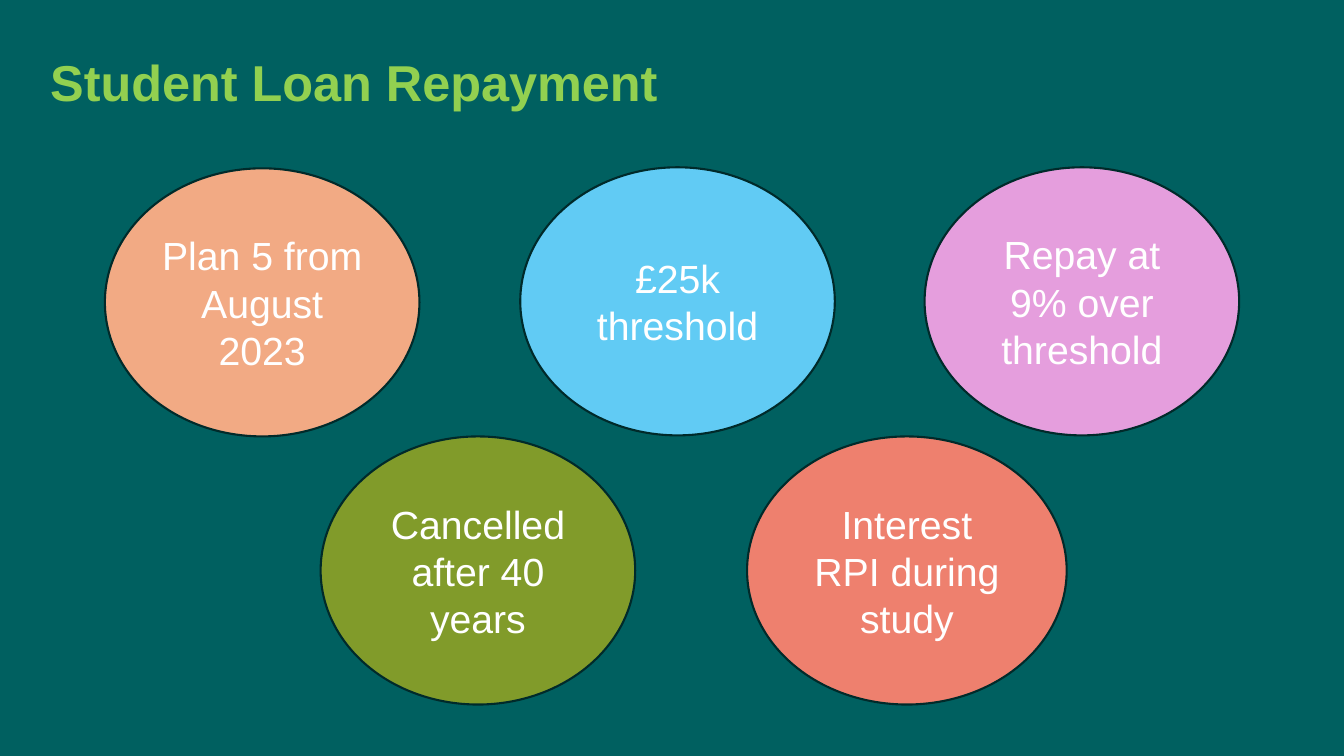
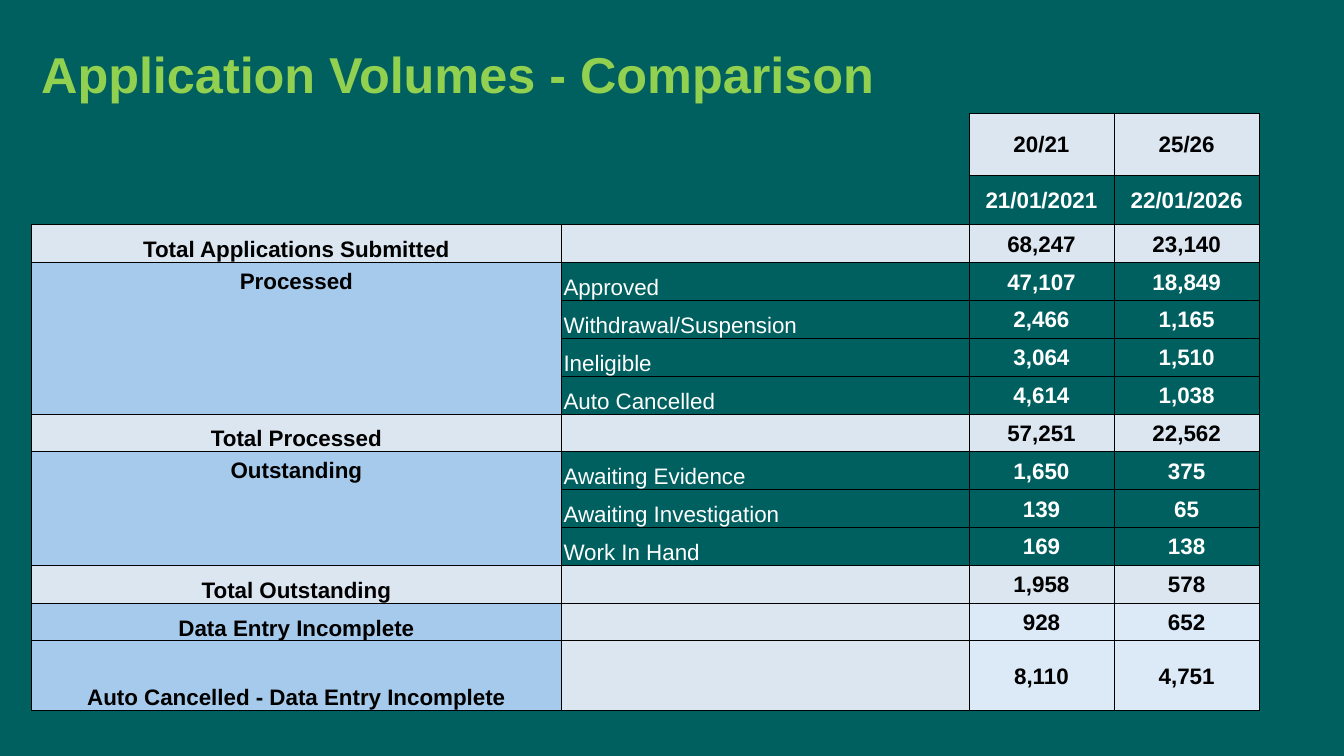
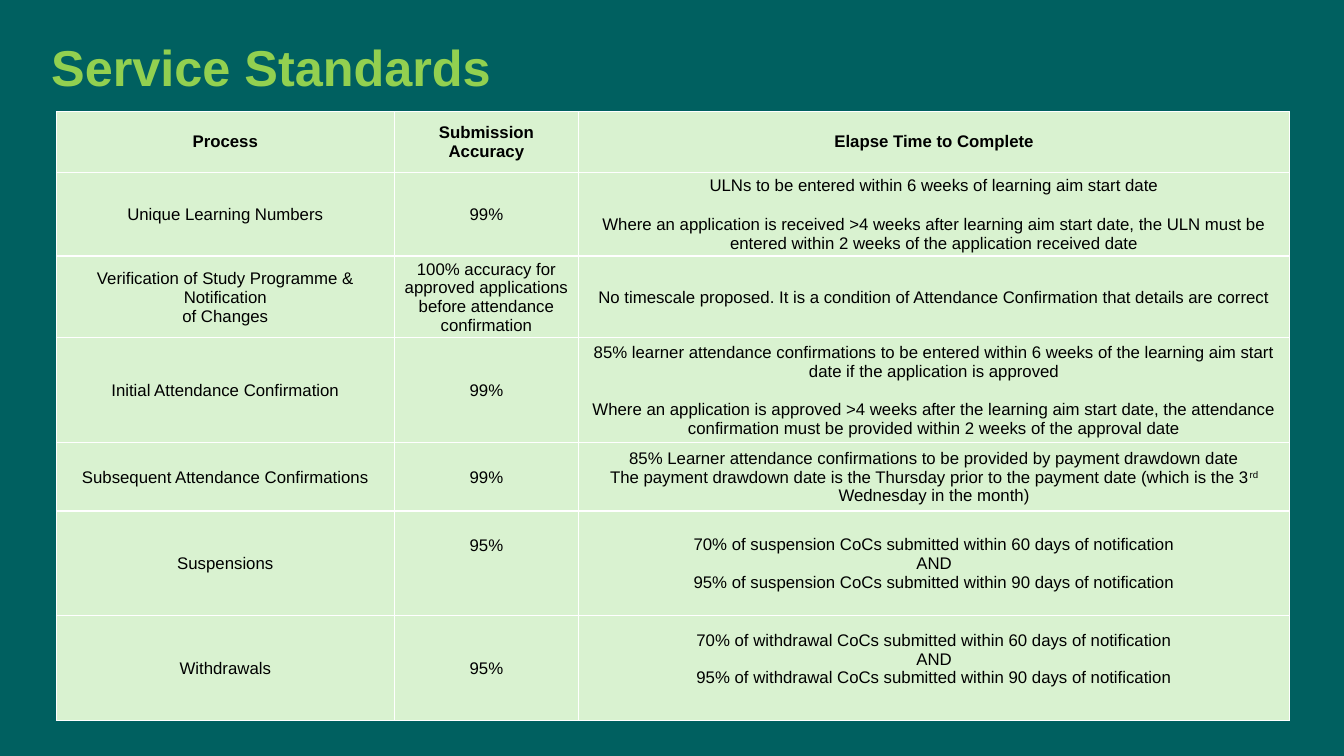
from lxml.etree import SubElement
from pptx import Presentation
from pptx.dml.color import RGBColor
from pptx.enum.shapes import MSO_SHAPE
from pptx.enum.text import MSO_ANCHOR, PP_ALIGN
from pptx.oxml.ns import qn
from pptx.util import Emu, Pt

EMU_PER_PX = 9144
FONT = "Arial"
TEAL, LIME, WHITE, BLACK = "006060", "92D050", "FFFFFF", "000000"
OUTLINE, PALE_GREEN = "002A2A", "D9F2D0"
GREY_BLUE, MID_BLUE, LIGHT_BLUE = "DCE6F1", "A6CAEC", "DCEAF7"
ALL_EDGES = "LRTB"
TIGHT = (2, 2, 2, 0)
PARAGRAPH_GAP = 14

CIRCLES = [
    ("Plan 5 from August 2023", 104, 167, 312, "F2AA84"),
    ("£25k threshold", 516, 166, 312, "61CBF4"),
    ("Repay at 9% over threshold", 917, 166, 312, "E59EDD"),
    ("Cancelled after 40 years", 318, 433, 312, "819B2A"),
    ("Interest RPI during study", 741, 433, 317, "EE806E"),
]

VOLUME_HEADERS = [("20/21", "25/26", GREY_BLUE), ("21/01/2021", "22/01/2026", None)]
VOLUME_GROUPS = [
    ("Total Applications Submitted", GREY_BLUE, GREY_BLUE, [("", "68,247", "23,140")]),
    ("Processed", MID_BLUE, None, [
        ("Approved", "47,107", "18,849"),
        ("Withdrawal/Suspension", "2,466", "1,165"),
        ("Ineligible", "3,064", "1,510"),
        ("Auto Cancelled", "4,614", "1,038"),
    ]),
    ("Total Processed", GREY_BLUE, GREY_BLUE, [("", "57,251", "22,562")]),
    ("Outstanding", MID_BLUE, None, [
        ("Awaiting Evidence", "1,650", "375"),
        ("Awaiting Investigation", "139", "65"),
        ("Work In Hand", "169", "138"),
    ]),
    ("Total Outstanding", GREY_BLUE, GREY_BLUE, [("", "1,958", "578")]),
    ("Data Entry Incomplete", MID_BLUE, LIGHT_BLUE, [("", "928", "652")]),
    ("Auto Cancelled - Data Entry Incomplete", MID_BLUE, LIGHT_BLUE, [("", "8,110", "4,751")]),
]

STANDARDS = [
    (["Process"], ["Submission Accuracy"], ["Elapse Time to Complete"]),
    (["Unique Learning Numbers"], ["99%"], [
        "ULNs to be entered within 6 weeks of learning aim start date",
        "Where an application is received >4 weeks after learning aim start date, "
        "the ULN must be entered within 2 weeks of the application received date",
    ]),
    (["Verification of Study Programme & Notification", "of Changes"],
     ["100% accuracy for approved applications before attendance confirmation"],
     ["No timescale proposed. It is a condition of Attendance Confirmation that details are correct"]),
    (["Initial Attendance Confirmation"], ["99%"], [
        "85% learner attendance confirmations to be entered within 6 weeks of "
        "the learning aim start date if the application is approved",
        "Where an application is approved >4 weeks after the learning aim start date, "
        "the attendance confirmation must be provided within 2 weeks of the approval date",
    ]),
    (["Subsequent Attendance Confirmations"], ["99%"], [
        "85% Learner attendance confirmations to be provided by payment drawdown date",
        "The payment drawdown date is the Thursday prior to the payment date "
        "(which is the 3^rd^ Wednesday in the month)",
    ]),
    (["Suspensions"], ["95%"], [
        "70% of suspension CoCs submitted within 60 days of notification",
        "AND",
        "95% of suspension CoCs submitted within 90 days of notification",
    ]),
    (["Withdrawals"], ["95%"], [
        "70% of withdrawal CoCs submitted within 60 days of notification",
        "AND",
        "95% of withdrawal CoCs submitted within 90 days of notification",
    ]),
]
SPACED_ROWS = (1, 3)
BOTTOM_INSETS = {(5, 1): 37, (6, 2): 19}


def px(length):
    """Turn pixels into EMU."""
    return Emu(round(length * EMU_PER_PX))


def rgb(value):
    """Turn a hex string into a colour."""
    return RGBColor.from_string(value)


def add_text(paragraph, text, size, color, bold=False):
    """Add runs to a paragraph, with parts between carets raised."""
    for index, part in enumerate(text.split("^")):
        run = paragraph.add_run()
        run.text = part
        run.font.name = FONT
        run.font.size = Pt(size)
        run.font.bold = bold
        run.font.color.rgb = rgb(color)
        if index % 2:
            run.font._element.set("baseline", "30000")


def add_slide(presentation, title, left, top):
    """Add a blank slide with the shared title style."""
    slide = presentation.slides.add_slide(presentation.slide_layouts[6])
    frame = slide.shapes.add_textbox(px(left), px(top), px(1150), px(68)).text_frame
    frame.word_wrap = True
    frame.vertical_anchor = MSO_ANCHOR.MIDDLE
    frame.paragraphs[0].line_spacing = 0.9
    add_text(frame.paragraphs[0], title, 36, LIME, True)
    return slide


def add_circle(slide, text, left, top, width, color):
    """Add an outlined ellipse with centred text."""
    shape = slide.shapes.add_shape(MSO_SHAPE.OVAL, px(left), px(top), px(width), px(266))
    shape.shadow.inherit = False
    shape.fill.solid()
    shape.fill.fore_color.rgb = rgb(color)
    shape.line.color.rgb = rgb(OUTLINE)
    shape.line.width = Pt(1.5)
    frame = shape.text_frame
    frame.word_wrap = True
    frame.vertical_anchor = MSO_ANCHOR.MIDDLE
    frame.paragraphs[0].alignment = PP_ALIGN.CENTER
    add_text(frame.paragraphs[0], text, 28, WHITE)


def add_table(slide, left, top, widths, heights):
    """Add a table without banding."""
    table = slide.shapes.add_table(
        len(heights), len(widths), px(left), px(top), px(sum(widths)), px(sum(heights))
    ).table
    table.first_row = table.horz_banding = False
    for column, width in zip(table.columns, widths):
        column.width = px(width)
    for row, height in zip(table.rows, heights):
        row.height = px(height)
    return table


def style_cell(cell, fill, line, width, edges=ALL_EDGES, insets=TIGHT):
    """Set the borders, fill and insets of a cell."""
    properties = cell._tc.get_or_add_tcPr()
    for edge in ALL_EDGES:
        border = SubElement(properties, qn(f"a:ln{edge}"), w=str(Pt(width)))
        if edge in edges:
            SubElement(SubElement(border, qn("a:solidFill")), qn("a:srgbClr"), val=line)
        else:
            SubElement(border, qn("a:noFill"))
    if fill:
        cell.fill.solid()
        cell.fill.fore_color.rgb = rgb(fill)
    else:
        cell.fill.background()
    cell.margin_left, cell.margin_top, cell.margin_right, cell.margin_bottom = map(px, insets)


def write_cell(cell, texts, size, color, bold, anchor=MSO_ANCHOR.MIDDLE,
               alignment=PP_ALIGN.CENTER, gap=0):
    """Write one paragraph for each text into a cell."""
    cell.vertical_anchor = anchor
    for index, text in enumerate(texts):
        paragraph = cell.text_frame.add_paragraph() if index else cell.text_frame.paragraphs[0]
        paragraph.alignment = alignment
        if index and gap:
            paragraph.space_before = Pt(gap)
        add_text(paragraph, text, size, color, bold)


def write_figures(table, row, figures, fill):
    """Fill the two figure columns of a volumes row."""
    for column, figure in enumerate(figures, 2):
        cell = table.cell(row, column)
        style_cell(cell, fill, BLACK, 0.5)
        write_cell(cell, [figure], 16, BLACK if fill else WHITE, True)


def write_group(table, first, label, label_fill, fill, lines):
    """Fill a labelled group of volumes rows."""
    grouped = len(lines) > 1
    insets = (15, 7, 15, 7) if grouped else TIGHT
    for row, (detail, *figures) in enumerate(lines, first):
        style_cell(table.cell(row, 0), label_fill, BLACK, 0.5, insets=insets)
        style_cell(table.cell(row, 1), None if grouped else GREY_BLUE, BLACK, 0.5)
        if detail:
            write_cell(table.cell(row, 1), [detail], 16, WHITE, False,
                       MSO_ANCHOR.BOTTOM, PP_ALIGN.LEFT)
        write_figures(table, row, figures, fill)
    heading = table.cell(first, 0)
    if grouped:
        heading.merge(table.cell(first + len(lines) - 1, 0))
    write_cell(heading, [label], 16, BLACK, True,
               MSO_ANCHOR.TOP if grouped else MSO_ANCHOR.BOTTOM)


def add_repayment_slide(presentation):
    """Add the loan repayment slide."""
    slide = add_slide(presentation, "Student Loan Repayment", 40, 51)
    for circle in CIRCLES:
        add_circle(slide, *circle)


def add_volumes_slide(presentation):
    """Add the application volumes slide."""
    slide = add_slide(presentation, "Application Volumes - Comparison", 31, 43)
    body_height = (593 - 62 - 49 - 69) / 11
    heights = [62, 49] + [body_height] * 11 + [69]
    table = add_table(slide, 31, 112, [526, 404, 144, 144], heights)
    for row, (*figures, fill) in enumerate(VOLUME_HEADERS):
        for column in range(2):
            edges = ("R" if column else "") + ("B" if row else "")
            style_cell(table.cell(row, column), None, BLACK, 0.5, edges)
        write_figures(table, row, figures, fill)
    first = len(VOLUME_HEADERS)
    for group in VOLUME_GROUPS:
        write_group(table, first, *group)
        first += len(group[-1])


def add_standards_slide(presentation):
    """Add the service standards slide."""
    slide = add_slide(presentation, "Service Standards", 41, 36)
    table = add_table(slide, 56, 111, [335, 183, 705], [60, 83, 76, 104, 68, 104, 104])
    for row, columns in enumerate(STANDARDS):
        for column, texts in enumerate(columns):
            cell = table.cell(row, column)
            insets = (1, 1, 1, BOTTOM_INSETS.get((row, column), 0)) if row else (7, 3, 7, 3)
            style_cell(cell, PALE_GREEN, WHITE, 1, insets=insets)
            write_cell(cell, texts, 12, BLACK, row == 0,
                       gap=PARAGRAPH_GAP if row in SPACED_ROWS else 0)


def main():
    """Build and save the presentation."""
    presentation = Presentation()
    presentation.slide_width, presentation.slide_height = px(1333), px(750)
    background = presentation.slide_master.background.fill
    background.solid()
    background.fore_color.rgb = rgb(TEAL)
    add_repayment_slide(presentation)
    add_volumes_slide(presentation)
    add_standards_slide(presentation)
    presentation.save("out.pptx")


if __name__ == "__main__":
    main()
